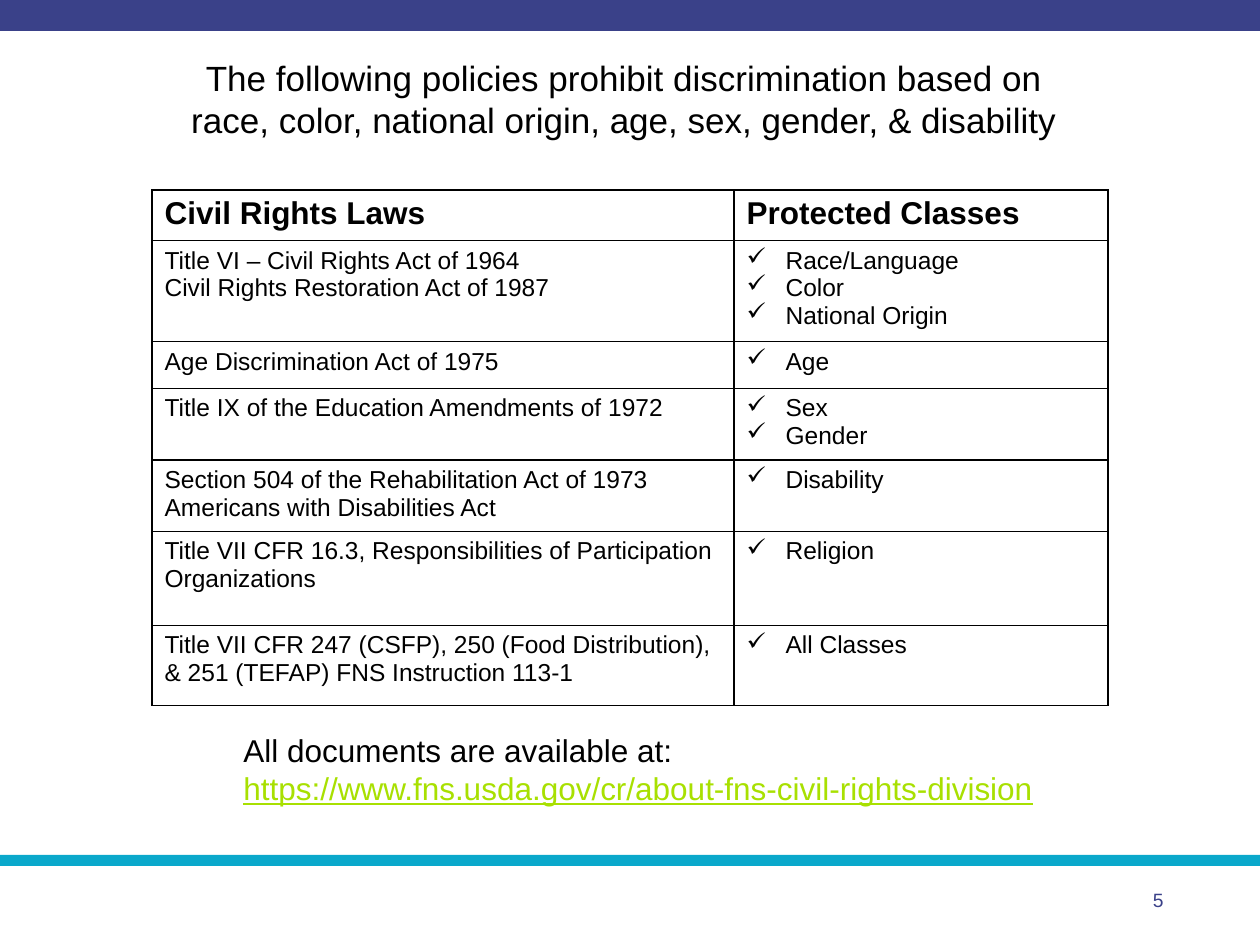
from dataclasses import dataclass

from lxml import etree
from pptx import Presentation
from pptx.dml.color import RGBColor
from pptx.enum.shapes import MSO_SHAPE
from pptx.enum.text import MSO_ANCHOR, PP_ALIGN
from pptx.oxml.ns import qn
from pptx.util import Emu, Pt

RECTANGLE = MSO_SHAPE.RECTANGLE
TOP = MSO_ANCHOR.TOP
LEFT, CENTER, RIGHT = PP_ALIGN.LEFT, PP_ALIGN.CENTER, PP_ALIGN.RIGHT
PIXELS_PER_INCH = 126
FONT = "Arial"
BLACK, NAVY, TEAL, LIME = "000000", "3A4189", "0AA8CB", "A8E001"
CHECK_INDENT = 39


@dataclass(frozen=True)
class Box:
    left: int
    top: int
    width: int
    height: int


@dataclass(frozen=True)
class Band:
    box: Box
    color: str


@dataclass(frozen=True)
class PolicyRow:
    height: int
    laws: tuple[str, ...]
    classes: tuple[str, ...]


SLIDE = Box(0, 0, 1260, 945)
BANDS = (
    Band(Box(0, 0, 1260, 31), NAVY),
    Band(Box(0, 855, 1260, 11), TEAL),
)
TITLE = (
    "The following policies prohibit discrimination based on\v"
    "race, color, national origin, age, sex, gender, & disability"
)
HEADINGS = ("Civil Rights Laws", "Protected Classes")
HEADING_HEIGHT = 50
COLUMN_WIDTHS = (582, 374)
POLICY_ROWS = (
    PolicyRow(
        101,
        ("Title VI – Civil Rights Act of 1964", "Civil Rights Restoration Act of 1987"),
        ("Race/Language", "Color", "National Origin"),
    ),
    PolicyRow(47, ("Age Discrimination Act of 1975",), ("Age",)),
    PolicyRow(71, ("Title IX of the Education Amendments of 1972",), ("Sex", "Gender")),
    PolicyRow(
        71,
        ("Section 504 of the Rehabilitation Act of 1973", "Americans with Disabilities Act"),
        ("Disability",),
    ),
    PolicyRow(
        94,
        ("Title VII CFR 16.3, Responsibilities of Participation", "Organizations"),
        ("Religion",),
    ),
    PolicyRow(
        80,
        ("Title VII CFR 247 (CSFP), 250 (Food Distribution),", "& 251 (TEFAP) FNS Instruction 113-1"),
        ("All Classes",),
    ),
)
SOURCE_LINES = (
    "All documents are available at:",
    "https://www.fns.usda.gov/cr/about-fns-civil-rights-division",
)


def px(length: int) -> Emu:
    return Emu(round(length * 914400 / PIXELS_PER_INCH))


def rgb(color: str) -> RGBColor:
    return RGBColor.from_string(color)


def place(shape, box: Box) -> None:
    shape.left, shape.top = px(box.left), px(box.top)
    shape.width, shape.height = px(box.width), px(box.height)


def style(paragraph, size: int, color: str = BLACK, bold: bool = False) -> None:
    font = paragraph.font
    font.name, font.size, font.bold = FONT, Pt(size), bold
    font.color.rgb = rgb(color)


def write_lines(frame, lines: tuple[str, ...], size: int, color: str = BLACK,
                bold: bool = False, align=LEFT) -> None:
    frame.text = "\n".join(lines)
    for paragraph in frame.paragraphs:
        paragraph.alignment = align
        style(paragraph, size, color, bold)


def add_band(slide, band: Band) -> None:
    shape = slide.shapes.add_shape(RECTANGLE, 0, 0, 0, 0)
    place(shape, band.box)
    shape.shadow.inherit = False
    shape.fill.solid()
    shape.fill.fore_color.rgb = rgb(band.color)
    shape.line.fill.background()


def add_text(slide, box: Box, lines: tuple[str, ...], size: int,
             color: str = BLACK, align=LEFT):
    shape = slide.shapes.add_textbox(0, 0, 0, 0)
    place(shape, box)
    shape.text_frame.word_wrap = True
    write_lines(shape.text_frame, lines, size, color, align=align)
    return shape.text_frame


def add_checks(frame) -> None:
    for paragraph in frame.paragraphs:
        properties = paragraph._p.get_or_add_pPr()
        properties.set("marL", str(px(CHECK_INDENT)))
        properties.set("indent", str(-px(CHECK_INDENT)))
        bullet = etree.Element(qn("a:buChar"), char="✓")
        properties.insert(0, bullet)


def add_borders(cell) -> None:
    properties = cell._tc.get_or_add_tcPr()
    for position, side in enumerate(("a:lnL", "a:lnR", "a:lnT", "a:lnB")):
        line = etree.Element(qn(side), w=str(Pt(1)))
        fill = etree.SubElement(line, qn("a:solidFill"))
        etree.SubElement(fill, qn("a:srgbClr"), val=BLACK)
        properties.insert(position, line)


def add_policy_table(slide, left: int, top: int) -> None:
    heights = (HEADING_HEIGHT, *(row.height for row in POLICY_ROWS))
    table = slide.shapes.add_table(
        len(heights), len(COLUMN_WIDTHS), px(left), px(top),
        px(sum(COLUMN_WIDTHS)), px(sum(heights)),
    ).table
    for column, width in zip(table.columns, COLUMN_WIDTHS):
        column.width = px(width)
    for row, height in zip(table.rows, heights):
        row.height = px(height)
    for cell in table.iter_cells():
        cell.fill.background()
        add_borders(cell)
    for index, heading in enumerate(HEADINGS):
        write_lines(table.cell(0, index).text_frame, (heading,), 18, bold=True)
    for index, row in enumerate(POLICY_ROWS, start=1):
        write_lines(table.cell(index, 0).text_frame, row.laws, 14)
        classes = table.cell(index, 1).text_frame
        write_lines(classes, row.classes, 14)
        add_checks(classes)


def main() -> None:
    presentation = Presentation()
    presentation.slide_width, presentation.slide_height = px(SLIDE.width), px(SLIDE.height)
    slide = presentation.slides.add_slide(presentation.slide_layouts[5])
    for band in BANDS:
        add_band(slide, band)
    add_text(slide, Box(892, 882, 284, 37), ("5",), 11, NAVY, RIGHT)
    add_policy_table(slide, 152, 190)

    title = slide.shapes.title
    place(title, Box(73, 50, 1102, 90))
    title.text_frame.vertical_anchor = TOP
    write_lines(title.text_frame, (TITLE,), 20, align=CENTER)

    source = add_text(slide, Box(231, 725, 882, 90), SOURCE_LINES, 18)
    link = source.paragraphs[1]
    link.font.color.rgb = rgb(LIME)
    link.font.underline = True

    presentation.save("out.pptx")


if __name__ == "__main__":
    main()
